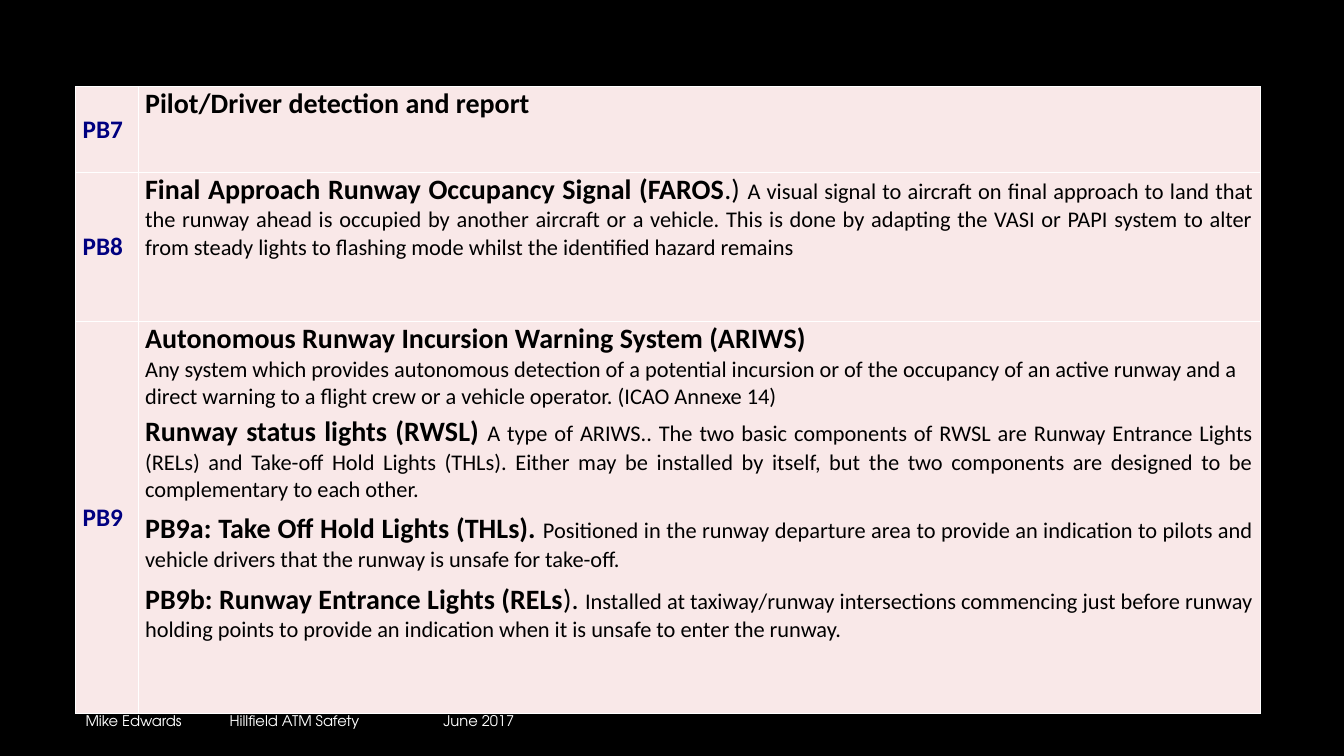
from lxml import etree
from pptx import Presentation, util as u
from pptx.dml.color import RGBColor
from pptx.enum import text
from pptx.oxml import ns

BLACK = RGBColor(0x00, 0x00, 0x00)
WHITE = RGBColor(0xFF, 0xFF, 0xFF)
NAVY = RGBColor(0x00, 0x00, 0x80)
PINK = RGBColor(0xF9, 0xE8, 0xE8)

HEAD = (20, True)
LINK = (20, False)
BODY = (16, False)
LEFT, JUSTIFY = text.PP_ALIGN.LEFT, text.PP_ALIGN.JUSTIFY

ROWS = [
    ("PB7", 0.85, [
        (JUSTIFY, [("Pilot/Driver detection and report", HEAD)]),
    ]),
    ("PB8", 1.48, [
        (JUSTIFY, [
            ("Final Approach Runway Occupancy Signal (FAROS", HEAD),
            (".) ", LINK),
            ("A visual signal to aircraft on final approach to land that the runway ahead is "
             "occupied by another aircraft or a vehicle. This is done by adapting the VASI or "
             "PAPI system to alter from steady lights to flashing mode whilst the identified "
             "hazard remains", BODY)]),
    ]),
    ("PB9", 3.89, [
        (LEFT, [("Autonomous Runway Incursion Warning System (ARIWS)", HEAD)]),
        (LEFT, [
            ("Any system which provides autonomous detection of a potential incursion or of the "
             "occupancy of an active runway and a direct warning to a flight crew or a vehicle "
             "operator. (ICAO Annexe 14)", BODY)]),
        (JUSTIFY, [
            ("Runway status lights (RWSL) ", HEAD),
            ("A type of ARIWS.. The two basic components of RWSL are Runway Entrance Lights "
             "(RELs) and Take-off Hold Lights (THLs). Either may be installed by itself, but the "
             "two components are designed to be complementary to each other.", BODY)]),
        (JUSTIFY, [
            ("PB9a: Take Off Hold Lights (THLs). ", HEAD),
            ("Positioned in the runway departure area to provide an indication to pilots and "
             "vehicle drivers that the runway is unsafe for take-off.", BODY)]),
        (JUSTIFY, [
            ("PB9b: Runway Entrance Lights (RELs", HEAD),
            ("). ", LINK),
            ("Installed at taxiway/runway intersections commencing just before runway holding "
             "points to provide an indication when it is unsafe to enter the runway.", BODY)]),
    ]),
]
COLUMNS = (0.62, 11.13)
LEFT_EDGE, TABLE_TOP = 0.75, 0.86
FOOTER = ("Mike Edwards", "Hillfield ATM Safety", "June 2017")
FOOTER_TABS = (1.43, 3.55)


def style_cell(cell):
    cell.fill.solid()
    cell.fill.fore_color.rgb = PINK
    cell.margin_left = cell.margin_right = u.Inches(0.07)
    cell.margin_top = cell.margin_bottom = 0
    tcPr = cell._tc.get_or_add_tcPr()
    for i, side in enumerate(("lnL", "lnR", "lnT", "lnB")):
        ln = etree.Element(ns.qn("a:" + side), w=str(u.Pt(1)))
        fill = etree.SubElement(ln, ns.qn("a:solidFill"))
        etree.SubElement(fill, ns.qn("a:srgbClr"), val=str(WHITE))
        tcPr.insert(i, ln)


def style_font(font, name, color):
    font.name = name
    font.color.rgb = color


def fill_label(cell, label):
    style_cell(cell)
    cell.vertical_anchor = text.MSO_ANCHOR.MIDDLE
    p = cell.text_frame.paragraphs[0]
    p.text = label
    style_font(p.font, "Calibri", NAVY)
    p.font.size, p.font.bold = u.Pt(18), True


def fill_description(cell, paragraphs):
    style_cell(cell)
    tf = cell.text_frame
    for i, (align, runs) in enumerate(paragraphs):
        p = tf.add_paragraph() if i else tf.paragraphs[0]
        p.alignment = align
        if align == JUSTIFY:
            p.space_after = u.Pt(3)
            if i:
                p.space_before = u.Pt(3)
        style_font(p.font, "Calibri", BLACK)
        for words, (size, bold) in runs:
            r = p.add_run()
            r.text = words
            r.font.size, r.font.bold = u.Pt(size), bold


def add_footer(s):
    box = s.shapes.add_textbox(u.Inches(LEFT_EDGE), u.Inches(6.95), u.Inches(8.5), u.Inches(0.4))
    tf = box.text_frame
    tf.word_wrap = True
    tf.vertical_anchor = text.MSO_ANCHOR.MIDDLE
    p = tf.paragraphs[0]
    p.text = "\t".join(FOOTER)
    tabs = etree.SubElement(p._p.get_or_add_pPr(), ns.qn("a:tabLst"))
    for pos in FOOTER_TABS:
        etree.SubElement(tabs, ns.qn("a:tab"), pos=str(u.Inches(pos)), algn="l")
    style_font(p.font, "TeX Gyre Adventor", WHITE)
    p.font.size = u.Pt(10.5)


def add_table(s):
    heights = [height for _, height, _ in ROWS]
    table = s.shapes.add_table(
        len(ROWS), len(COLUMNS), u.Inches(LEFT_EDGE), u.Inches(TABLE_TOP),
        u.Inches(sum(COLUMNS)), u.Inches(sum(heights))).table
    table.first_row = table.horz_banding = False
    for column, width in zip(table.columns, COLUMNS):
        column.width = u.Inches(width)
    for i, (label, height, paragraphs) in enumerate(ROWS):
        table.rows[i].height = u.Inches(height)
        fill_label(table.cell(i, 0), label)
        fill_description(table.cell(i, 1), paragraphs)


def main():
    prs = Presentation()
    prs.slide_width, prs.slide_height = u.Inches(13.33), u.Inches(7.5)
    s = prs.slides.add_slide(prs.slide_layouts[6])
    s.background.fill.solid()
    s.background.fill.fore_color.rgb = BLACK
    add_footer(s)
    add_table(s)
    prs.save("out.pptx")


if __name__ == "__main__":
    main()
